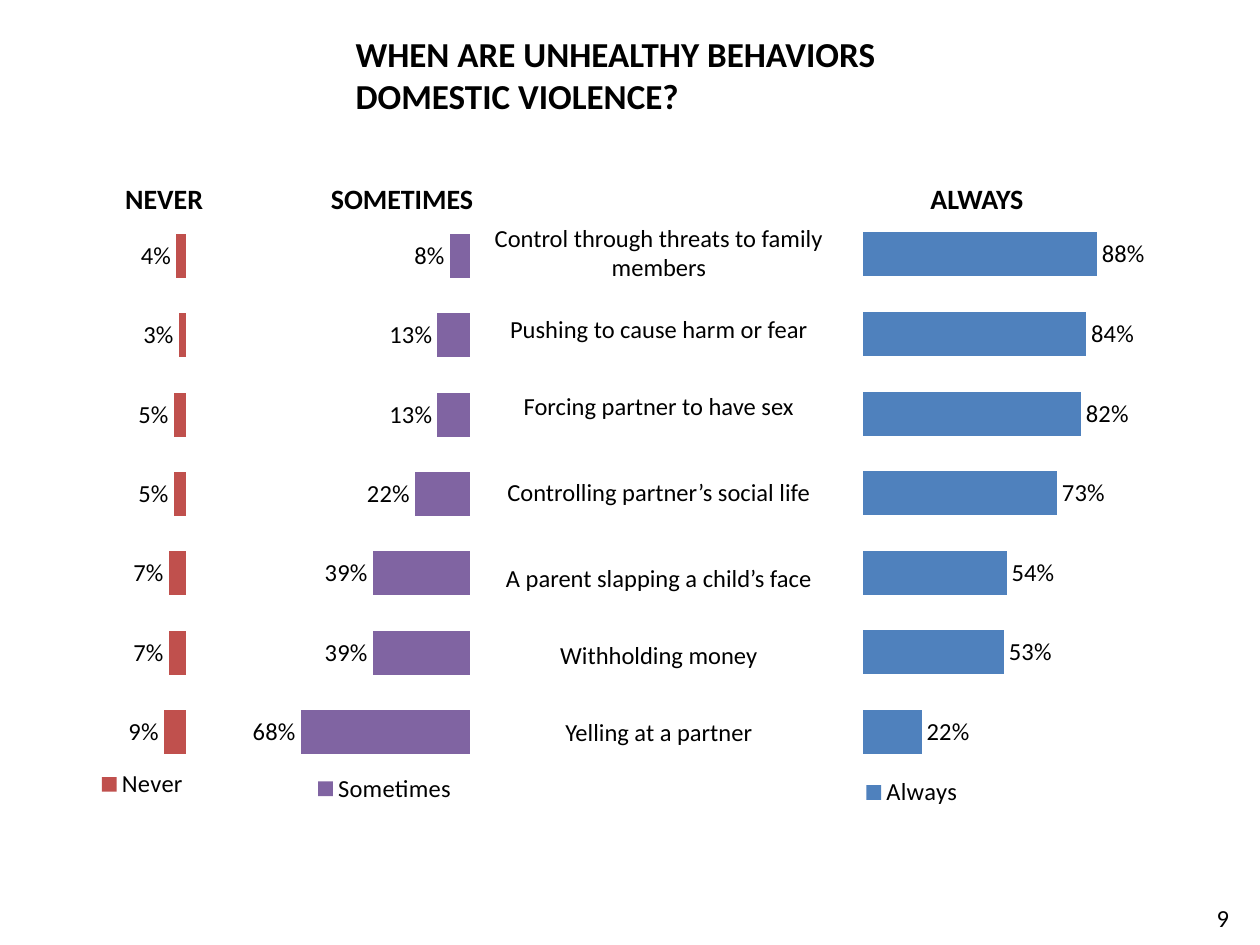
import pptx
import pptx.chart.data
import pptx.dml.color
import pptx.enum.chart
import pptx.enum.text
import pptx.oxml
import pptx.oxml.ns
import pptx.util

Pt = pptx.util.Pt
RGBColor = pptx.dml.color.RGBColor
ALIGN = pptx.enum.text.PP_ALIGN
ANCHOR = pptx.enum.text.MSO_ANCHOR

BLACK = RGBColor(0x00, 0x00, 0x00)
RED = RGBColor(0xC0, 0x50, 0x4D)
PURPLE = RGBColor(0x80, 0x64, 0xA2)
BLUE = RGBColor(0x4F, 0x81, 0xBD)
FONT = "Calibri"

BEHAVIORS = [
    "Control through threats to family members",
    "Pushing to cause harm or fear",
    "Forcing partner to have sex",
    "Controlling partner’s social life",
    "A parent slapping a child’s face",
    "Withholding money",
    "Yelling at a partner",
]
ROW_HEIGHTS = [44, 44, 44, 54, 44, 44, 44]

# Values run from the bottom bar to the top one; plot and legend are fractions of the chart.
LEFT_PLOT = (0.09, 0.025, 0.89, 0.87)
CHARTS = [
    dict(name="Always", values=[0.22, 0.53, 0.54, 0.73, 0.82, 0.84, 0.88], color=BLUE,
         box=(483, 116.5, 187.5, 363), plot=(0.055, 0.017, 0.89, 0.877),
         legend=(0.04, 0.895), reverse=False),
    dict(name="Sometimes", values=[0.68, 0.39, 0.39, 0.22, 0.13, 0.13, 0.08], color=PURPLE,
         box=(96.5, 114.5, 175.5, 365), plot=LEFT_PLOT, legend=(0.46, 0.89), reverse=True),
    dict(name="Never", values=[0.09, 0.07, 0.07, 0.05, 0.05, 0.03, 0.04], color=RED,
         box=(-65.5, 114.5, 175.5, 365), plot=LEFT_PLOT, legend=(0.69, 0.883), reverse=True),
]
HEADINGS = [("NEVER", 20), ("SOMETIMES", 156), ("ALWAYS", 484.5)]


def points(box):
    return [Pt(length) for length in box]


def style_font(font, size, bold=False):
    font.name = FONT
    font.size = Pt(size)
    font.bold = bold
    font.color.rgb = BLACK


def write(frame, text, size, bold=False, align=ALIGN.CENTER):
    frame.word_wrap = True
    para = frame.paragraphs[0]
    para.alignment = align
    span = para.add_run()
    span.text = text
    style_font(span.font, size, bold)


def add_title(page, box):
    title = page.shapes.title
    title.left, title.top, title.width, title.height = points(box)
    frame = title.text_frame
    frame.auto_size = pptx.enum.text.MSO_AUTO_SIZE.NONE
    frame.vertical_anchor = ANCHOR.MIDDLE
    write(frame, "WHEN ARE UNHEALTHY BEHAVIORS DOMESTIC VIOLENCE?", 20, True, ALIGN.LEFT)


def add_label(page, box, text, size, bold=False):
    label = page.shapes.add_textbox(*points(box))
    label.text_frame.vertical_anchor = ANCHOR.MIDDLE
    write(label.text_frame, text, size, bold)


def place_part(parent, index, fractions, inner=False):
    """Give a chart part a manual layout, as fractions of the chart."""
    for old in parent.findall(pptx.oxml.ns.qn("c:layout")):
        parent.remove(old)
    target = '<c:layoutTarget val="inner"/>' if inner else ""
    modes = '<c:xMode val="edge"/><c:yMode val="edge"/>'
    sizes = "".join(f'<c:{key} val="{value}"/>' for key, value in zip("xywh", fractions))
    parent.insert(index, pptx.oxml.parse_xml(
        f'<c:layout {pptx.oxml.ns.nsdecls("c")}><c:manualLayout>'
        f'{target}{modes}{sizes}</c:manualLayout></c:layout>'))


def add_bar_chart(page, box, name, values, color, plot, legend, reverse):
    data = pptx.chart.data.CategoryChartData(number_format="0%")
    data.categories = [str(number) for number in range(1, len(values) + 1)]
    data.add_series(name, values)
    chart = page.shapes.add_chart(
        pptx.enum.chart.XL_CHART_TYPE.BAR_CLUSTERED, *points(box), data).chart
    style_font(chart.font, 18)
    chart.has_title = False

    chart.category_axis.visible = False
    axis = chart.value_axis
    axis.visible = False
    axis.has_major_gridlines = False
    axis.minimum_scale, axis.maximum_scale = 0, 1.1
    axis.reverse_order = reverse

    bars = chart.plots[0]
    bars.gap_width = 81
    bars.vary_by_categories = False
    fill = bars.series[0].format.fill
    fill.solid()
    fill.fore_color.rgb = color
    labels = bars.series[0].data_labels
    labels.show_value = True
    labels.number_format = "0%"
    labels.number_format_is_linked = False
    labels.position = pptx.enum.chart.XL_LABEL_POSITION.OUTSIDE_END
    style_font(labels.font, 14)

    chart.has_legend = True
    chart.legend.position = pptx.enum.chart.XL_LEGEND_POSITION.BOTTOM
    chart.legend.include_in_layout = False
    style_font(chart.legend.font, 14)
    root = chart.element
    place_part(root.find(".//" + pptx.oxml.ns.qn("c:plotArea")), 0, plot, inner=True)
    place_part(root.find(".//" + pptx.oxml.ns.qn("c:legend")), 1, legend)


def add_behavior_table(page, box):
    table = page.shapes.add_table(len(BEHAVIORS), 1, *points(box)).table
    table.first_row = table.horz_banding = False
    for row, height, behavior in zip(table.rows, ROW_HEIGHTS, BEHAVIORS):
        row.height = Pt(height)
        cell = row.cells[0]
        cell.fill.background()
        cell.vertical_anchor = ANCHOR.MIDDLE
        cell.margin_left = cell.margin_right = cell.margin_top = Pt(0.75)
        cell.margin_bottom = Pt(0)
        write(cell.text_frame, behavior, 14)


def main():
    deck = pptx.Presentation()
    deck.slide_width, deck.slide_height = Pt(720), Pt(540)
    page = deck.slides.add_slide(deck.slide_layouts[5])
    add_title(page, (196, 15, 374, 55.5))
    for chart in CHARTS:
        add_bar_chart(page, **chart)
    add_behavior_table(page, (269.5, 122.5, 214, sum(ROW_HEIGHTS)))
    for text, left in HEADINGS:
        add_label(page, (left, 100, 147.5, 26.5), text, 16, True)
    add_label(page, (677.5, 508.5, 42.5, 31.5), "9", 14)
    deck.save("out.pptx")


if __name__ == "__main__":
    main()
